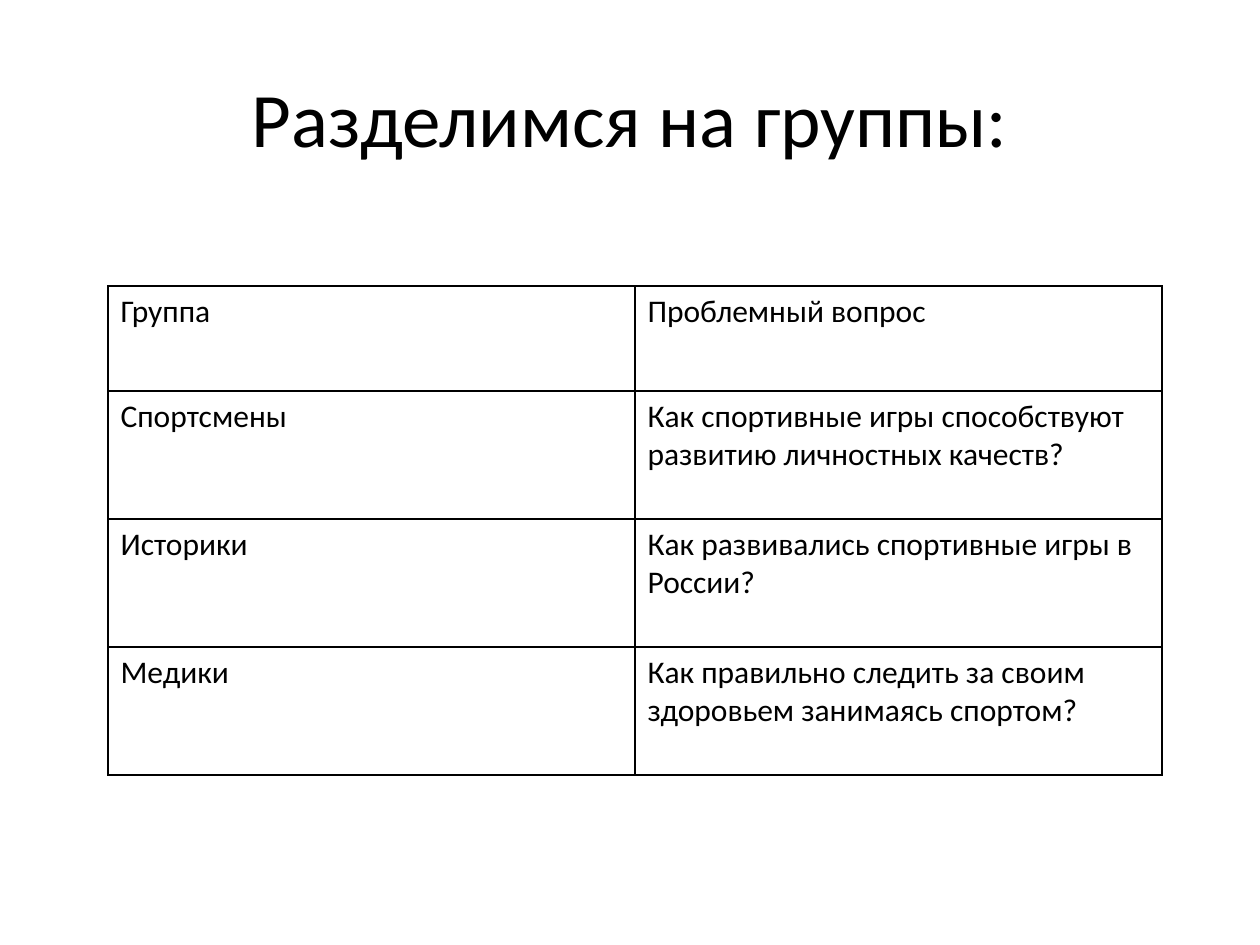
from dataclasses import dataclass

from lxml import etree
from pptx import Presentation
from pptx.dml.color import RGBColor
from pptx.enum.text import MSO_ANCHOR, PP_ALIGN
from pptx.oxml.ns import qn
from pptx.util import Emu, Pt

MIDDLE = MSO_ANCHOR.MIDDLE
TOP = MSO_ANCHOR.TOP
CENTER = PP_ALIGN.CENTER
LEFT = PP_ALIGN.LEFT

PX_PER_INCH = 126
SLIDE_W, SLIDE_H = 1260, 945


def px(n):
    return Emu(n * 914400 // PX_PER_INCH)


@dataclass(frozen=True)
class Theme:
    font: str = "Calibri"
    text: str = "000000"
    paper: str = "FFFFFF"
    border: str = "000000"
    border_pt: int = 1
    title_pt: int = 44
    body_pt: int = 18


class Deck:
    def __init__(self, theme):
        self.theme = theme
        self.prs = Presentation()
        self.prs.slide_width, self.prs.slide_height = px(SLIDE_W), px(SLIDE_H)
        self.s = None

    def add_slide(self):
        self.s = self.prs.slides.add_slide(self.prs.slide_layouts[6])
        fill = self.s.background.fill
        fill.solid()
        fill.fore_color.rgb = RGBColor.from_string(self.theme.paper)

    def add_text(self, tf, text, size, align):
        tf.word_wrap = True
        p = tf.paragraphs[0]
        p.alignment = align
        r = p.add_run()
        r.text = text
        r.font.name = self.theme.font
        r.font.size = Pt(size)
        r.font.color.rgb = RGBColor.from_string(self.theme.text)

    def title(self, text, x, y, w, h):
        sp = self.s.shapes.add_textbox(px(x), px(y), px(w), px(h))
        sp.text_frame.vertical_anchor = MIDDLE
        self.add_text(sp.text_frame, text, self.theme.title_pt, CENTER)

    def cell_borders(self, cell):
        # Border lines come before the fill in the cell properties
        tc_pr = cell._tc.get_or_add_tcPr()
        for i, side in enumerate(("a:lnL", "a:lnR", "a:lnT", "a:lnB")):
            ln = etree.Element(qn(side), w=str(Pt(self.theme.border_pt)))
            fill = etree.SubElement(ln, qn("a:solidFill"))
            etree.SubElement(fill, qn("a:srgbClr"), val=self.theme.border)
            tc_pr.insert(i, ln)

    def table(self, rows, x, y, col_w, row_heights):
        n_cols = len(rows[0])
        frame = self.s.shapes.add_table(
            len(rows), n_cols, px(x), px(y), px(col_w * n_cols), px(sum(row_heights)))
        table = frame.table
        for col in table.columns:
            col.width = px(col_w)
        for row, height, texts in zip(table.rows, row_heights, rows):
            row.height = px(height)
            for cell, text in zip(row.cells, texts):
                cell.fill.background()
                cell.vertical_anchor = TOP
                self.cell_borders(cell)
                self.add_text(cell.text_frame, text, self.theme.body_pt, LEFT)
        # Plain grid: no header or banding emphasis
        table.first_row = table.horz_banding = False


GROUPS = [
    ("Группа", "Проблемный вопрос"),
    ("Спортсмены", "Как спортивные игры способствуют развитию личностных качеств?"),
    ("Историки", "Как развивались спортивные игры в России?"),
    ("Медики", "Как правильно следить за своим здоровьем занимаясь спортом?"),
]


def main():
    deck = Deck(Theme())
    deck.add_slide()

    # Heading
    deck.title("Разделимся на группы:", 63, 38, 1134, 157)

    # Groups and their questions
    row_heights = [105] + [128] * (len(GROUPS) - 1)
    deck.table(GROUPS, 108, 286, 527, row_heights)

    deck.prs.save("out.pptx")


if __name__ == "__main__":
    main()
